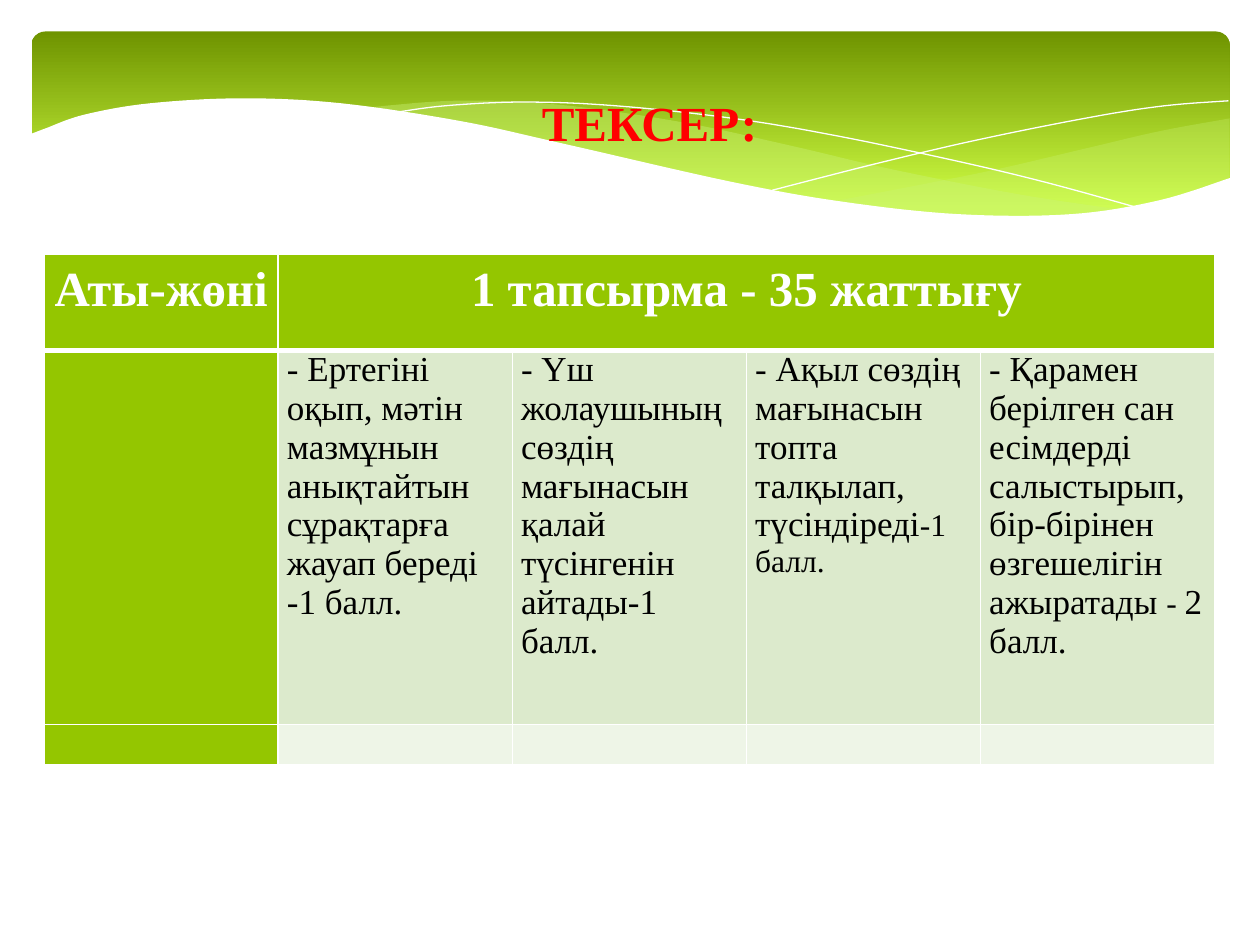
from lxml.etree import SubElement
from pptx import Presentation
from pptx.dml.color import RGBColor
from pptx.enum.shapes import MSO_SHAPE
from pptx.enum.text import MSO_ANCHOR, PP_ALIGN
from pptx.oxml.ns import qn
from pptx.util import Inches, Pt

COLORS = {
    "white": "FFFFFF", "black": "000000", "red": "FF0000", "green": "94C600",
    "dark": "6F9400", "lime": "D0FF44", "veil": "CAF278",
    "row": "DCEACC", "pale": "EEF5E7",
}
FONT = "Times New Roman"

# Curves as key points, in inches from the corner of the band
EDGE = [(9.52, 1.16), (8.95, 1.34), (8.25, 1.45), (7.36, 1.45), (6.43, 1.35),
        (5.54, 1.19), (4.22, 0.89), (3.4, 0.71), (2.46, 0.57), (1.68, 0.53),
        (0.94, 0.57), (0.42, 0.66), (0.11, 0.77), (-0.02, 0.82)]
RIGHT = [[(9.51, 0.69), (8.96, 0.79), (8.36, 0.93), (7.54, 1.12), (6.36, 1.35)],
         [(6.36, 1.35), (7.2, 1.45), (7.99, 1.47), (8.72, 1.42), (9.24, 1.27),
          (9.51, 1.16)]]
LEFT = [[(8.68, 1.42), (7.82, 1.29), (6.81, 1.09), (6.04, 0.91), (5.16, 0.72),
         (4.17, 0.58), (3.36, 0.55), (2.61, 0.61)],
        [(2.61, 0.61), (3.37, 0.72), (4.24, 0.91), (5.41, 1.18), (6.4, 1.36),
         (7.36, 1.46), (8.03, 1.48), (8.68, 1.42)]]
THREADS = [
    [(2.84, 0.65), (3.28, 0.59), (3.91, 0.56), (4.64, 0.59), (5.57, 0.69),
     (6.4, 0.83), (7.35, 1.03), (8.06, 1.2), (8.82, 1.41)],
    [(5.88, 1.26), (6.7, 1.05), (7.51, 0.86), (8.41, 0.68), (8.99, 0.59),
     (9.5, 0.55)],
]

HEADS = ["Аты-жөні", "1 тапсырма - 35 жаттығу"]
TASKS = [
    [("- Ертегіні оқып, мәтін мазмұнын анықтайтын сұрақтарға жауап береді "
      "-1 балл.", 20)],
    [("- Үш жолаушының сөздің мағынасын қалай түсінгенін айтады-1 балл.", 20)],
    [("- Ақыл сөздің мағынасын топта талқылап, түсіндіреді", 20),
     ("-1 балл.", 18)],
    [("- Қарамен берілген сан есімдерді салыстырып, бір-бірінен өзгешелігін "
      "ажыратады ", 20), ("- ", 18), ("2 балл.", 20)],
]


def rgb(name):
    return RGBColor.from_string(COLORS[name])


def style(run, size, color, bold=False):
    font = run.font
    font.name, font.size, font.bold = FONT, Pt(size), bold
    font.color.rgb = rgb(color)


def smooth(keys, steps=8):
    """Sample a Catmull-Rom curve through the key points."""
    ends = [keys[0], *keys, keys[-1]]
    dots = [keys[0]]
    for a, b, c, d in zip(ends, ends[1:], ends[2:], ends[3:]):
        for step in range(1, steps + 1):
            t = step / steps
            dots.append(tuple(
                (2 * q + (r - p) * t + (2 * p - 5 * q + 4 * r - s) * t ** 2
                 + (3 * q - p - 3 * r + s) * t ** 3) / 2
                for p, q, r, s in zip(a, b, c, d)))
    return dots


def outline(slide, box, dots, fill=None, alpha=100):
    """Draw a filled area, or a hairline where no fill is given."""
    dots = [(Inches(box[0] + x), Inches(box[1] + y)) for x, y in dots]
    pen = slide.shapes.build_freeform(*dots[0], scale=1.0)
    pen.add_line_segments(dots[1:], close=bool(fill))
    shape = pen.convert_to_shape()
    shape.shadow.inherit = False
    if fill:
        shape.fill.solid()
        shape.fill.fore_color.rgb = rgb(fill)
        shape.line.fill.background()
        if alpha < 100:
            tint = shape.fill._xPr.find(".//" + qn("a:srgbClr"))
            SubElement(tint, qn("a:alpha"), val=str(alpha * 1000))
    else:
        shape.fill.background()
        shape.line.color.rgb = rgb("white")
        shape.line.width = Pt(0)


def add_band(slide, box):
    # Green panel
    panel = slide.shapes.add_shape(MSO_SHAPE.ROUNDED_RECTANGLE,
                                   *map(Inches, box))
    panel.adjustments[0] = 0.07
    panel.shadow.inherit = False
    panel.line.fill.background()
    panel.fill.gradient()
    panel.fill.gradient_angle = 270
    for stop, place, name in zip(panel.fill.gradient_stops, (0, 0.9),
                                 ("dark", "lime")):
        stop.position = place
        stop.color.rgb = rgb(name)
    # Translucent waves, threads and the white lower edge
    for curves, alpha in ((RIGHT, 29), (LEFT, 40)):
        dots = [dot for keys in curves for dot in smooth(keys)]
        outline(slide, box, dots, "veil", alpha)
    for keys in THREADS:
        outline(slide, box, smooth(keys))
    base = [(-0.02, 1.98), (9.52, 1.98)]
    outline(slide, box, smooth(EDGE) + base, "white")


def add_title(slide, box):
    title = slide.shapes.title
    title.left, title.top, title.width, title.height = map(Inches, box)
    frame = title.text_frame
    frame.text = "ТЕКСЕР:"
    frame.vertical_anchor = MSO_ANCHOR.MIDDLE
    para = frame.paragraphs[0]
    para.alignment = PP_ALIGN.CENTER
    style(para.runs[0], 28, "red", True)
    slide.shapes._spTree.append(title._element)  # in front of the band


def paint(cell, fill, top=1, base=1):
    cell.margin_left = cell.margin_right = Inches(0.07)
    cell.margin_top = cell.margin_bottom = 0
    props = cell._tc.get_or_add_tcPr()
    for tag, width in (("lnL", 1), ("lnR", 1), ("lnT", top), ("lnB", base)):
        line = SubElement(props, qn("a:" + tag), w=str(Pt(width)))
        solid = SubElement(line, qn("a:solidFill"))
        SubElement(solid, qn("a:srgbClr"), val=COLORS["white"])
    cell.fill.solid()
    cell.fill.fore_color.rgb = rgb(fill)


def add_grid(slide, box):
    table = slide.shapes.add_table(3, 5, *map(Inches, box)).table
    for col in table.columns:
        col.width = Inches(box[2] / 5)
    for row, height in zip(table.rows, (0.76, 2.97, 0.32)):
        row.height = Inches(height)
    # Fills and borders
    for r, (fill, top, base) in enumerate(
            (("green", 1, 3), ("row", 3, 1), ("pale", 1, 1))):
        for c in range(5):
            paint(table.cell(r, c), fill if c else "green", top, base)
    table.cell(0, 1).merge(table.cell(0, 4))
    # Header
    for c, text in enumerate(HEADS):
        para = table.cell(0, c).text_frame.paragraphs[0]
        para.text = text
        para.alignment = PP_ALIGN.CENTER
        para.line_spacing = 1.15
        style(para.runs[0], 28, "white", True)
    # Tasks
    for c, parts in enumerate(TASKS, 1):
        para = table.cell(1, c).text_frame.paragraphs[0]
        for text, size in parts:
            run = para.add_run()
            run.text = text
            style(run, size, "black")


def main():
    deck = Presentation()
    deck.slide_width, deck.slide_height = Inches(10), Inches(7.5)
    slide = deck.slides.add_slide(deck.slide_layouts[5])
    add_band(slide, (0.25, 0.25, 9.51, 1.56))
    add_title(slide, (1.77, 0.68, 6.77, 0.57))
    add_grid(slide, (0.35, 2.02, 9.29, 4.05))
    deck.save("out.pptx")


if __name__ == "__main__":
    main()
